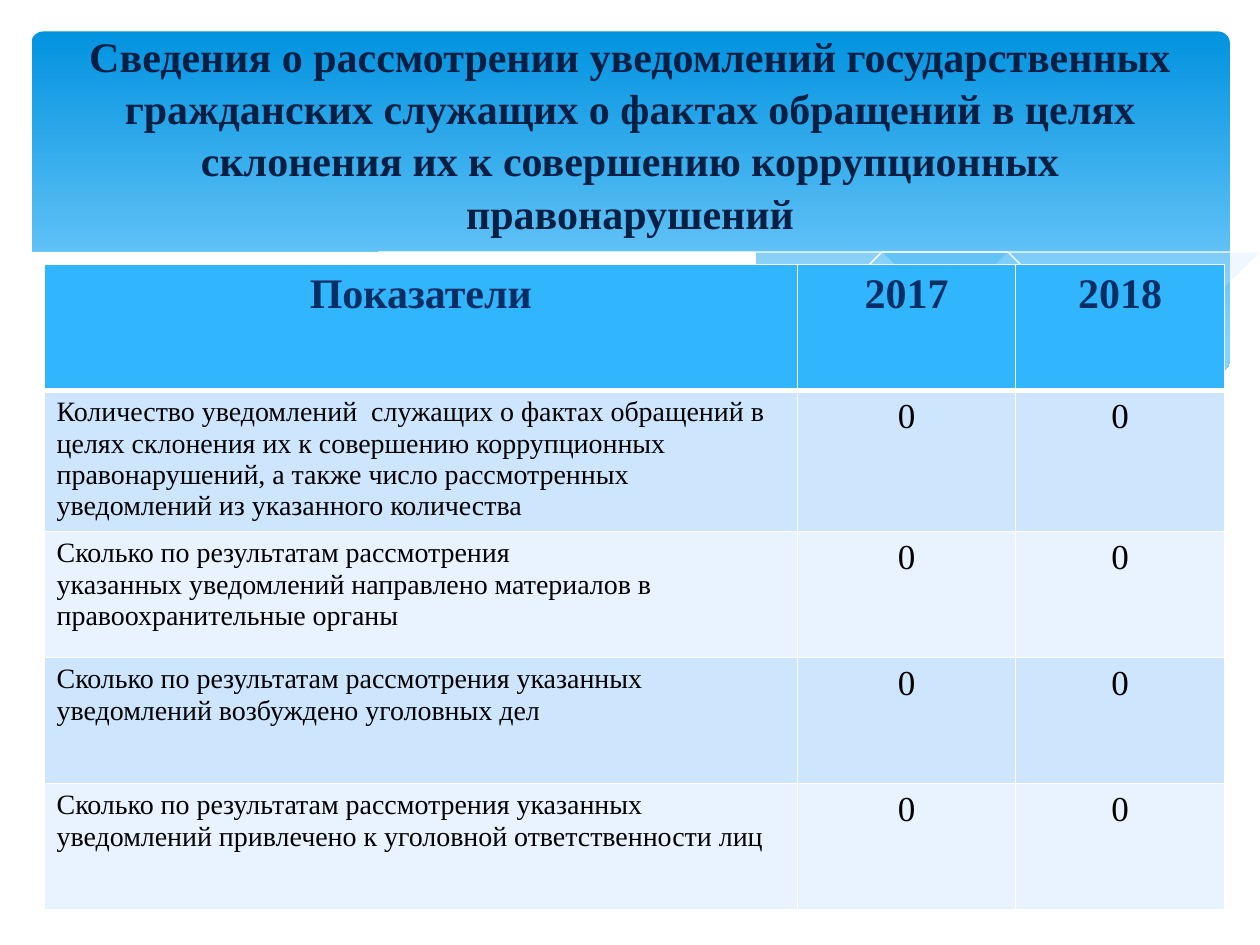
from lxml import etree
from pptx import Presentation
from pptx.dml.color import RGBColor
from pptx.enum.shapes import MSO_SHAPE
from pptx.enum.text import MSO_ANCHOR, PP_ALIGN
from pptx.oxml.ns import qn
from pptx.util import Inches, Pt

# Content
TITLE = ("Сведения о рассмотрении уведомлений государственных гражданских служащих "
         "о фактах обращений в целях склонения их к совершению коррупционных правонарушений")
ROWS = [
    ("Показатели", "2017", "2018"),
    ("Количество уведомлений  служащих о фактах обращений в целях склонения их "
     "к совершению коррупционных правонарушений, а также число рассмотренных "
     "уведомлений из указанного количества", "0", "0"),
    ("Сколько по результатам рассмотрения\nуказанных уведомлений направлено "
     "материалов в правоохранительные органы", "0", "0"),
    ("Сколько по результатам рассмотрения указанных уведомлений "
     "возбуждено уголовных дел", "0", "0"),
    ("Сколько по результатам рассмотрения указанных уведомлений "
     "привлечено к уголовной ответственности лиц", "0", "0"),
]
COL_WIDTHS = (5.98, 1.73, 1.66)
ROW_HEIGHTS = (1, 1.12, 1, 1, 1)

THEME = {
    "font": "Times New Roman",
    "title": "041F44", "header_text": "052E65", "text": "000000",
    "header": "31B6FD", "bands": ("CEE5FE", "E8F3FF"),
    "top": "0293E0", "bottom": "83D3FE", "wave": "C6E7FC", "white": "FFFFFF",
    "title_size": 24, "header_size": 24, "label_size": 16, "value_size": 20,
}

# Wave outlines, in inches
RIGHT_WAVE = [
    (9.76, 2), (9.48, 2.04), (9.21, 2.1), (8.91, 2.16), (8.61, 2.23), (8.05, 2.37),
    (7.53, 2.48), (7.06, 2.57), (6.61, 2.65), (6.91, 2.69), (7.19, 2.72), (7.45, 2.75),
    (7.69, 2.77), (8.03, 2.78), (8.35, 2.77), (8.63, 2.75), (8.89, 2.72), (9.13, 2.67),
    (9.35, 2.62), (9.49, 2.57), (9.76, 2.47),
]
MIDDLE_WAVE = [
    (8.93, 2.73), (8.66, 2.69), (8.07, 2.6), (7.41, 2.47), (6.68, 2.31), (6.29, 2.22),
    (5.98, 2.14), (5.69, 2.08), (5.41, 2.03), (5.14, 1.98), (4.89, 1.94), (4.65, 1.91),
    (4.42, 1.89), (4.2, 1.87), (3.8, 1.85), (3.44, 1.86), (3.13, 1.88), (2.86, 1.91),
    (3.23, 1.96), (3.62, 2.03), (4.04, 2.11), (4.49, 2.22), (5.3, 2.4), (5.84, 2.52),
    (6.34, 2.61), (6.8, 2.68), (7.22, 2.74), (7.61, 2.77), (8.07, 2.78), (8.48, 2.77),
]
LEFT_LINE = [
    (3.09, 1.95), (3.28, 1.92), (3.53, 1.89), (3.87, 1.87), (4.33, 1.87), (4.69, 1.89),
    (5.1, 1.92), (5.56, 1.97), (6.08, 2.04), (6.65, 2.13), (7.27, 2.26), (7.95, 2.41),
    (8.69, 2.61), (9.07, 2.72),
]
RIGHT_LINE = [
    (6.13, 2.57), (6.53, 2.46), (6.95, 2.35), (7.48, 2.23), (8.06, 2.1), (8.66, 1.99),
    (8.95, 1.94), (9.24, 1.9), (9.51, 1.87), (9.75, 1.85),
]
WHITE_WAVE = [
    (9.77, 2.46), (9.59, 2.53), (9.4, 2.59), (9.2, 2.65), (8.99, 2.69), (8.75, 2.73),
    (8.5, 2.75), (8.09, 2.77), (7.61, 2.75), (7.26, 2.72), (6.88, 2.68), (6.48, 2.62),
    (6.03, 2.54), (5.55, 2.45), (5.03, 2.33), (4.47, 2.2), (4.18, 2.13), (3.91, 2.07),
    (3.65, 2.02), (3.4, 1.97), (3.16, 1.94), (2.92, 1.9), (2.71, 1.88), (2.5, 1.86),
    (2.3, 1.85), (2.11, 1.84), (1.77, 1.84), (1.61, 1.84), (1.46, 1.85), (1.32, 1.86),
    (1.19, 1.87), (1.06, 1.89), (0.95, 1.91), (0.85, 1.93), (0.76, 1.95), (0.67, 1.97),
    (0.59, 1.99), (0.52, 2.01), (0.46, 2.03), (0.36, 2.07), (0.29, 2.1), (0.23, 2.13),
    (0.23, 3.29), (9.77, 3.29),
]
# Points, fill, opacity in percent; no fill means an open white line
WAVES = [
    (RIGHT_WAVE, "wave", 29),
    (MIDDLE_WAVE, "wave", 40),
    (LEFT_LINE, None, 100),
    (RIGHT_LINE, None, 100),
    (WHITE_WAVE, "white", 100),
]


def rgb(name):
    return RGBColor.from_string(THEME.get(name, name))


def add_band(shapes):
    sp = shapes.add_shape(MSO_SHAPE.ROUNDED_RECTANGLE, Inches(0.25), Inches(0.25),
                          Inches(9.51), Inches(2.7))
    sp.adjustments[0] = 0.034
    sp.shadow.inherit = False
    sp.line.fill.background()
    sp.fill.gradient()
    sp.fill.gradient_angle = 270
    for stop, color, position in zip(sp.fill.gradient_stops, ("top", "bottom"), (0, 0.9)):
        stop.color.rgb = rgb(color)
        stop.position = position


def add_wave(shapes, points, color, opacity):
    builder = shapes.build_freeform(*points[0], scale=Inches(1))
    builder.add_line_segments(points[1:], close=color is not None)
    sp = builder.convert_to_shape()
    sp.shadow.inherit = False
    if color is None:
        sp.fill.background()
        sp.line.color.rgb = rgb("white")
        sp.line.width = Pt(0)
        return
    sp.line.fill.background()
    sp.fill.solid()
    sp.fill.fore_color.rgb = rgb(color)
    if opacity < 100:
        clr = sp.fill._xPr.find(".//" + qn("a:srgbClr"))
        etree.SubElement(clr, qn("a:alpha"), val=str(opacity * 1000))


def format_text(tf, size, color, bold, align):
    for p in tf.paragraphs:
        p.alignment = align
        p.font.name = THEME["font"]
        p.font.size = Pt(THEME[size])
        p.font.bold = bold
        p.font.color.rgb = rgb(color)


def set_borders(cell, bottom):
    tc_pr = cell._tc.get_or_add_tcPr()
    for i, (side, width) in enumerate((("L", 1), ("R", 1), ("T", 1), ("B", bottom))):
        ln = etree.Element(qn("a:ln" + side), w=str(Pt(width)))
        fill = etree.SubElement(ln, qn("a:solidFill"))
        etree.SubElement(fill, qn("a:srgbClr"), val=THEME["white"])
        tc_pr.insert(i, ln)


def add_indicator_table(shapes):
    table = shapes.add_table(len(ROWS), len(COL_WIDTHS), Inches(0.35), Inches(2.1),
                             Inches(sum(COL_WIDTHS)), Inches(sum(ROW_HEIGHTS))).table
    for column, width in zip(table.columns, COL_WIDTHS):
        column.width = Inches(width)
    for row, height in zip(table.rows, ROW_HEIGHTS):
        row.height = Inches(height)
    for r, texts in enumerate(ROWS):
        for c, text in enumerate(texts):
            cell = table.cell(r, c)
            cell.text = text
            cell.fill.solid()
            if r == 0:
                cell.fill.fore_color.rgb = rgb("header")
                format_text(cell.text_frame, "header_size", "header_text", True, PP_ALIGN.CENTER)
            else:
                cell.fill.fore_color.rgb = rgb(THEME["bands"][(r - 1) % 2])
                size, align = (("value_size", PP_ALIGN.CENTER) if c
                               else ("label_size", PP_ALIGN.LEFT))
                format_text(cell.text_frame, size, "text", False, align)
            set_borders(cell, 3 if r == 0 else 1)


def place_title(shapes):
    title = shapes.title
    title.left, title.top, title.width, title.height = map(Inches, (0.5, 0.37, 9, 1.37))
    tf = title.text_frame
    tf.text = TITLE
    tf.word_wrap = True
    tf.vertical_anchor = MSO_ANCHOR.MIDDLE
    format_text(tf, "title_size", "title", True, PP_ALIGN.CENTER)
    tf.paragraphs[0].line_spacing = 1.04
    shapes._spTree.append(title._element)  # bring to front


def main():
    prs = Presentation()
    prs.slide_width, prs.slide_height = Inches(10), Inches(7.5)
    shapes = prs.slides.add_slide(prs.slide_layouts[5]).shapes
    add_band(shapes)
    for wave in WAVES:
        add_wave(shapes, *wave)
    add_indicator_table(shapes)
    place_title(shapes)
    prs.save("out.pptx")


if __name__ == "__main__":
    main()
